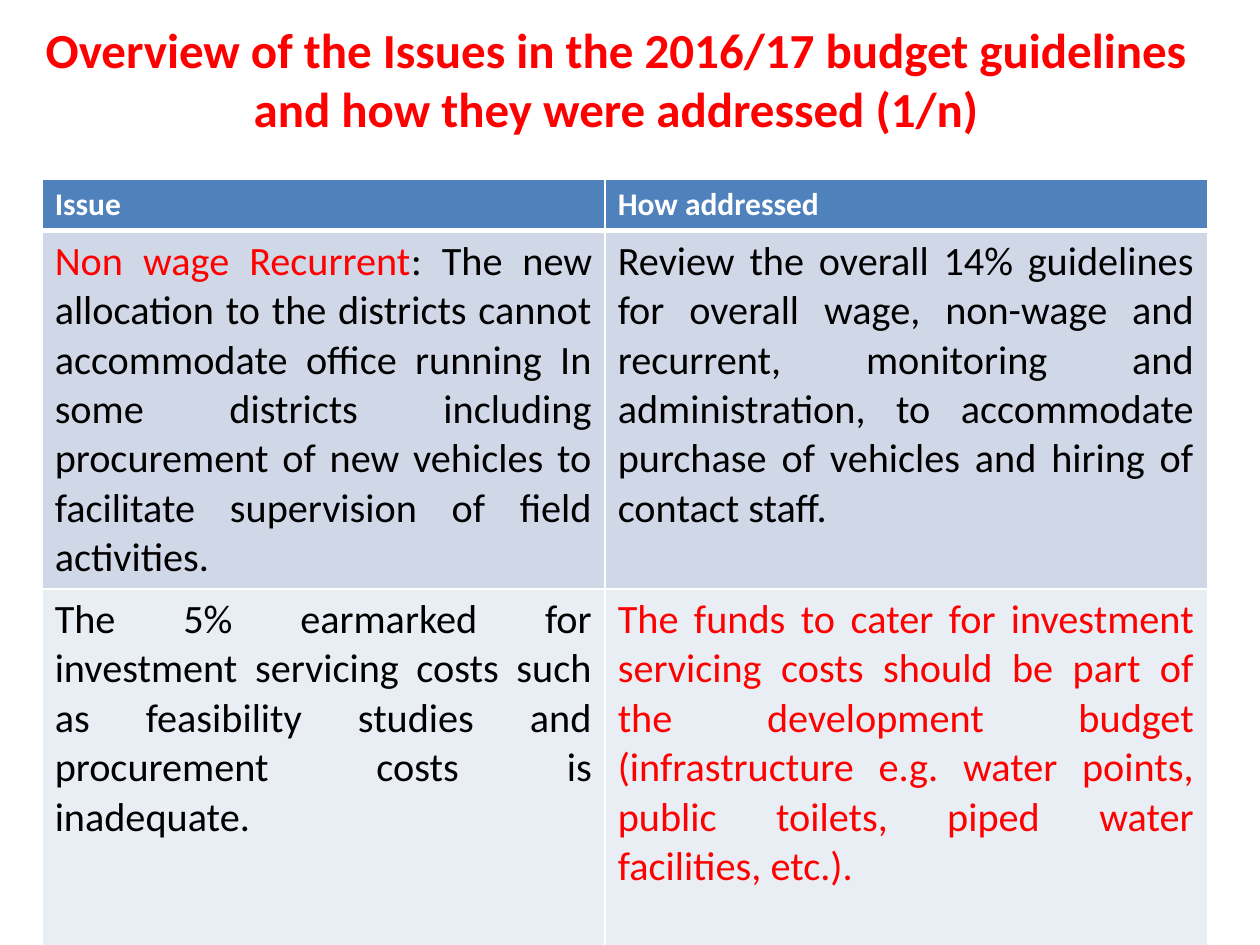
from lxml.etree import SubElement
from pptx import Presentation
from pptx.dml.color import RGBColor
from pptx.enum.text import MSO_ANCHOR as ANCHOR, PP_ALIGN as ALIGN
from pptx.oxml.ns import qn
from pptx.util import Cm, Pt

RED = RGBColor(0xFF, 0x00, 0x00)
BLACK = RGBColor(0x00, 0x00, 0x00)
WHITE = RGBColor(0xFF, 0xFF, 0xFF)
BLUE = RGBColor(0x4F, 0x81, 0xBD)
BAND_DARK = RGBColor(0xD0, 0xD8, 0xE8)
BAND_LIGHT = RGBColor(0xE9, 0xED, 0xF4)

TITLE = "Overview of the Issues in the 2016/17 budget guidelines and how they were addressed (1/n)"
HEADERS = ["Issue", "How addressed"]
ROWS = [
    [
        [
            ("Non wage Recurrent", RED),
            (": The new allocation to the districts cannot accommodate office running In some "
             "districts including procurement of new vehicles to facilitate supervision of "
             "field activities.", BLACK),
        ],
        [("Review the overall 14% guidelines for overall wage, non-wage and recurrent, "
          "monitoring and administration, to accommodate purchase of vehicles and hiring of "
          "contact staff.", BLACK)],
    ],
    [
        [("The 5% earmarked for investment servicing costs such as feasibility studies and "
          "procurement costs is inadequate.", BLACK)],
        [("The funds to cater for investment servicing costs should be part of the development "
          "budget (infrastructure e.g. water points, public toilets, piped water facilities, "
          "etc.).", RED)],
    ],
]


def add_text(p, text, font="Calibri", size=23, color=BLACK, bold=False):
    r = p.add_run()
    r.text = text
    r.font.name = font
    r.font.size = Pt(size)
    r.font.color.rgb = color
    r.font.bold = bold


class Deck:
    def __init__(self, width, height):
        self.prs = Presentation()
        self.prs.slide_width, self.prs.slide_height = Cm(width), Cm(height)
        self.s = None

    def add_slide(self):
        self.s = self.prs.slides.add_slide(self.prs.slide_layouts[5])

    def title(self, text, left, top, width, height):
        sp = self.s.shapes.title
        sp.left, sp.top, sp.width, sp.height = Cm(left), Cm(top), Cm(width), Cm(height)
        tf = sp.text_frame
        tf.word_wrap = True
        tf.vertical_anchor = ANCHOR.MIDDLE
        p = tf.paragraphs[0]
        p.alignment = ALIGN.CENTER
        add_text(p, text, size=28, color=RED, bold=True)

    def border(self, cell, side, width):
        ln = SubElement(cell._tc.get_or_add_tcPr(), qn(f"a:ln{side}"), w=str(Pt(width)))
        fill = SubElement(ln, qn("a:solidFill"))
        SubElement(fill, qn("a:srgbClr"), val=str(WHITE))

    def cell(self, cell, runs, fill, align, top=1, bottom=1, **fmt):
        for side, width in (("L", 1), ("R", 1), ("T", top), ("B", bottom)):
            self.border(cell, side, width)
        cell.fill.solid()
        cell.fill.fore_color.rgb = fill
        p = cell.text_frame.paragraphs[0]
        p.alignment = align
        for text, color in runs:
            add_text(p, text, color=color, **fmt)

    def table(self, headers, rows, left, top, widths, heights):
        table = self.s.shapes.add_table(
            len(heights), len(widths), Cm(left), Cm(top), Cm(sum(widths)), Cm(sum(heights))
        ).table
        for col, width in zip(table.columns, widths):
            col.width = Cm(width)
        for row, height in zip(table.rows, heights):
            row.height = Cm(height)
        for j, text in enumerate(headers):
            self.cell(table.cell(0, j), [(text, WHITE)], BLUE, ALIGN.LEFT,
                      bottom=3, size=18, bold=True)
        for i, row in enumerate(rows, 1):
            fill = BAND_DARK if i % 2 else BAND_LIGHT
            for j, runs in enumerate(row):
                self.cell(table.cell(i, j), runs, fill, ALIGN.JUSTIFY, top=3 if i == 1 else 1)


def main():
    deck = Deck(25.4, 19.05)
    deck.add_slide()
    deck.title(TITLE, 0.03, 0, 24.77, 3.17)
    deck.table(HEADERS, ROWS, 0.85, 3.61, [11.35, 12.14], [1.04, 7.2, 7.2])
    deck.prs.save("out.pptx")


if __name__ == "__main__":
    main()
